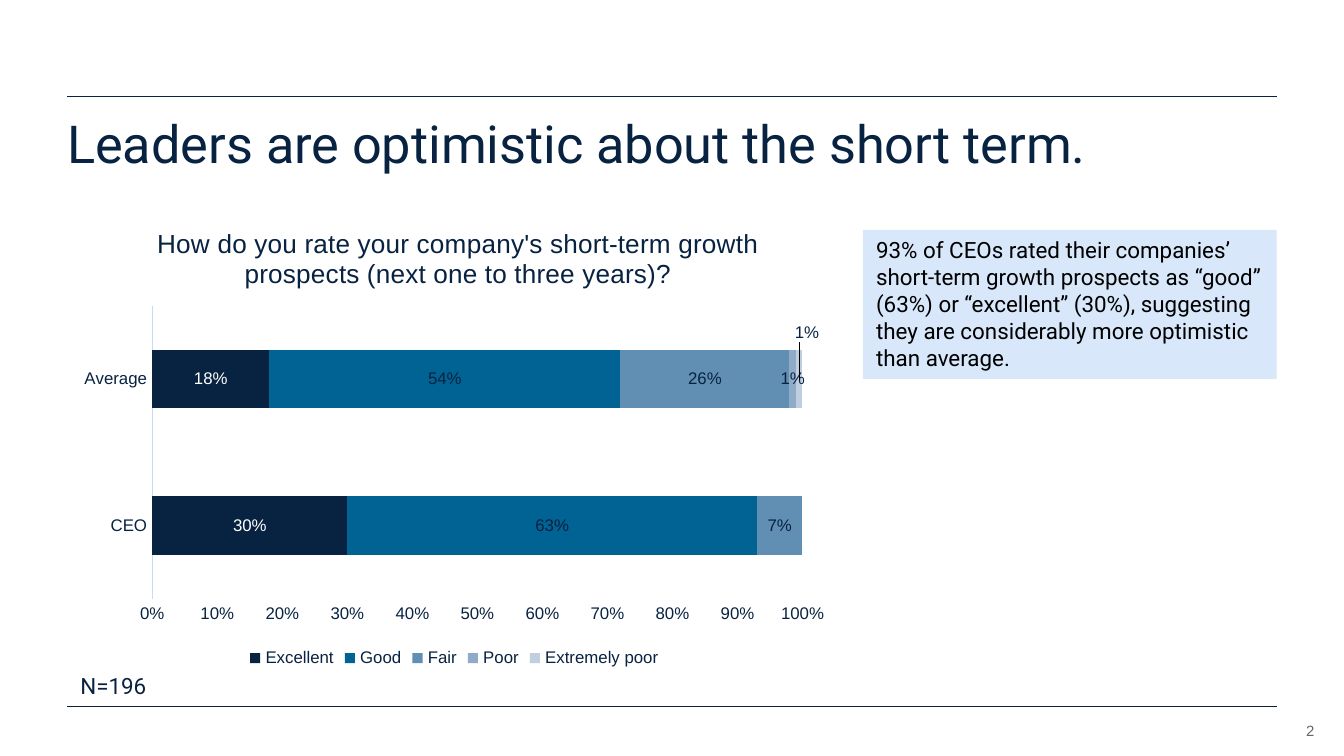
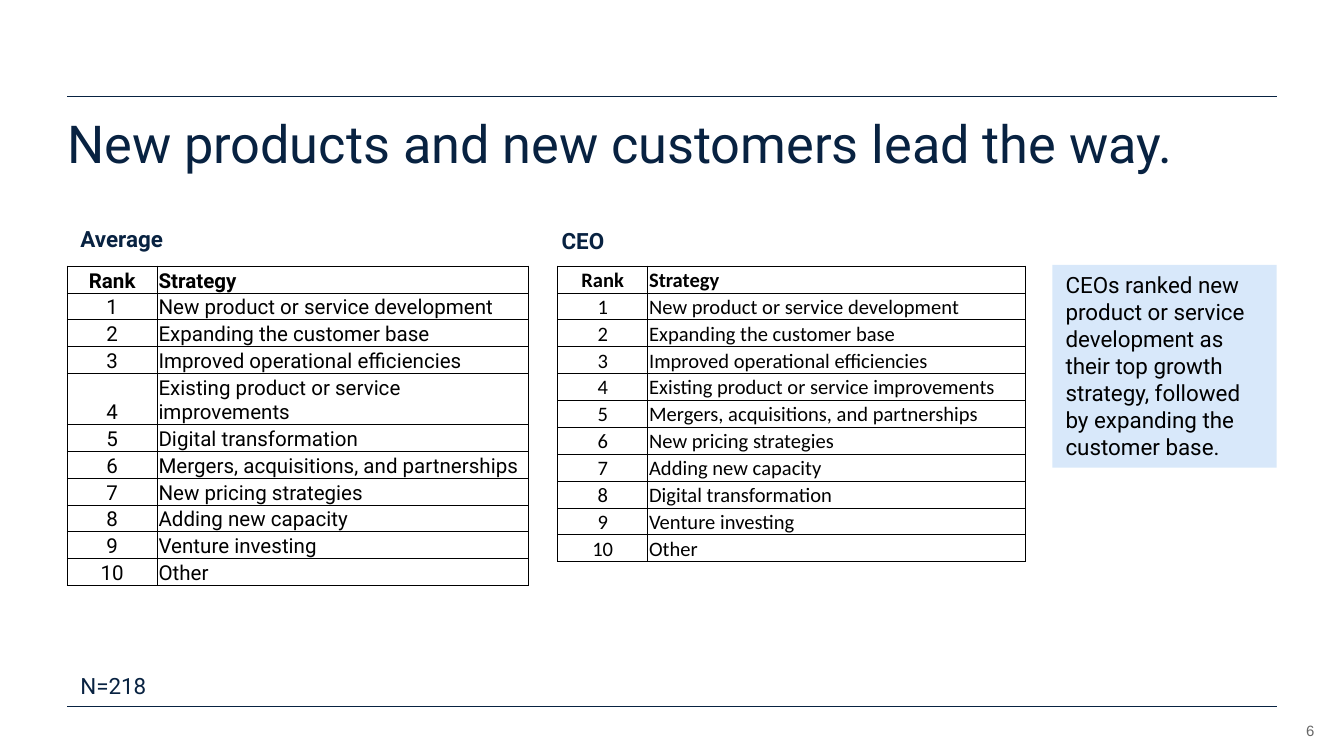
from lxml import etree
from pptx import Presentation
from pptx.chart.data import CategoryChartData
from pptx.dml.color import RGBColor
from pptx.enum.chart import XL_CHART_TYPE, XL_LABEL_POSITION, XL_LEGEND_POSITION, XL_TICK_MARK
from pptx.enum.shapes import MSO_CONNECTOR, MSO_SHAPE
from pptx.enum.text import MSO_ANCHOR, MSO_AUTO_SIZE, PP_ALIGN
from pptx.oxml import parse_xml
from pptx.oxml.ns import nsdecls, qn
from pptx.util import Inches, Pt

STACKED = XL_CHART_TYPE.BAR_STACKED_100
LABEL_CENTER = XL_LABEL_POSITION.CENTER
LEGEND_BOTTOM = XL_LEGEND_POSITION.BOTTOM
NO_TICK = XL_TICK_MARK.NONE
STRAIGHT = MSO_CONNECTOR.STRAIGHT
RECT = MSO_SHAPE.RECTANGLE
TOP, BOTTOM = MSO_ANCHOR.TOP, MSO_ANCHOR.BOTTOM
GROW, FIXED = MSO_AUTO_SIZE.SHAPE_TO_FIT_TEXT, MSO_AUTO_SIZE.NONE
LEFT, CENTER, RIGHT = PP_ALIGN.LEFT, PP_ALIGN.CENTER, PP_ALIGN.RIGHT

COLORS = {
    "navy": "082241", "blue": "006393", "steel": "618EB3", "mist": "8FABC8",
    "pale": "C1CEDF", "axis": "C5DCF8", "callout": "D8E8FA",
    "black": "000000", "white": "FFFFFF", "gray": "666666",
}
FONT, CHART_FONT = "Roboto", "Arial"
MARGIN, CONTENT_W = 0.5, 9

RATINGS = [
    ("Excellent", (0.30, 0.18), "navy"),
    ("Good", (0.63, 0.54), "blue"),
    ("Fair", (0.07, 0.26), "steel"),
    ("Poor", (None, 0.01), "mist"),
    ("Extremely poor", (None, 0.01), "pale"),
]
TOP_STRATEGIES = [
    "New product or service development", "Expanding the customer base",
    "Improved operational efficiencies", "Existing product or service improvements",
]
AVERAGE_RANKING = TOP_STRATEGIES + [
    "Digital transformation", "Mergers, acquisitions, and partnerships",
    "New pricing strategies", "Adding new capacity", "Venture investing", "Other",
]
CEO_RANKING = TOP_STRATEGIES + [
    "Mergers, acquisitions, and partnerships", "New pricing strategies",
    "Adding new capacity", "Digital transformation", "Venture investing", "Other",
]


def rgb(name):
    """Return the named colour."""
    return RGBColor.from_string(COLORS[name])


def style_font(font, size, color="navy", name=FONT, bold=False):
    """Set the look of a font."""
    font.size, font.name, font.bold = Pt(size), name, bold
    font.color.rgb = rgb(color)


def write(tf, text, size, color="navy", name=FONT, bold=False, align=LEFT):
    """Put one run of text in a text frame."""
    p = tf.paragraphs[0]
    p.alignment = align
    r = p.add_run()
    r.text = text
    style_font(r.font, size, color, name, bold)
    return p


def set_insets(box, left, top, right, bottom):
    """Set the inner margins of a text frame or cell."""
    box.margin_left, box.margin_top = Inches(left), Inches(top)
    box.margin_right, box.margin_bottom = Inches(right), Inches(bottom)


def add_rule(s, y):
    """Draw a full-width horizontal rule."""
    line = s.shapes.add_connector(STRAIGHT, Inches(MARGIN), Inches(y),
                                  Inches(MARGIN + CONTENT_W), Inches(y))
    line.line.color.rgb = rgb("navy")
    line.line.width = Pt(0.5)
    etree.SubElement(line._element.spPr, qn("a:effectLst"))


def add_label(s, text, x, y, w, bold=False):
    """Add a one-line label."""
    sp = s.shapes.add_textbox(Inches(x), Inches(y), Inches(w), Inches(0.3))
    tf = sp.text_frame
    tf.word_wrap = True
    tf.auto_size = GROW
    write(tf, text, 12, bold=bold)


def add_callout(s, text, x, y, w, h):
    """Add a tinted box with a finding."""
    sp = s.shapes.add_shape(RECT, Inches(x), Inches(y), Inches(w), Inches(h))
    sp.shadow.inherit = False
    sp.fill.solid()
    sp.fill.fore_color.rgb = rgb("callout")
    sp.line.fill.background()
    tf = sp.text_frame
    tf.word_wrap = True
    tf.auto_size = GROW
    tf.vertical_anchor = TOP
    write(tf, text, 12, "black")


def add_slide(prs, title, number, sample):
    """Add a slide with title, rules, page number and sample size."""
    s = prs.slides.add_slide(prs.slide_layouts[5])
    add_rule(s, 0.72)
    add_rule(s, 5.26)
    sp = s.shapes.add_textbox(Inches(9.31), Inches(5.32), Inches(0.47), Inches(0.18))
    tf = sp.text_frame
    tf.word_wrap = True
    tf.vertical_anchor = BOTTOM
    set_insets(tf, 0, 0, 0, 0)
    write(tf, number, 8, "gray", CHART_FONT, align=RIGHT)
    sp = s.shapes.title
    sp.left, sp.top = Inches(MARGIN), Inches(0.88)
    sp.width, sp.height = Inches(CONTENT_W), Inches(0.55)
    tf = sp.text_frame
    tf.word_wrap = True
    tf.auto_size = FIXED
    tf.vertical_anchor = TOP
    set_insets(tf, 0, 0, 0, 0)
    write(tf, title, 28).line_spacing = 0.9
    add_label(s, sample, MARGIN, 4.95, 0.96)
    return s


def chart_layout(x, y, w=None, h=None):
    """Return a manual chart layout, with a size for the plot area."""
    inner = '<c:layoutTarget val="inner"/>' if w else ""
    modes = '<c:xMode val="edge"/><c:yMode val="edge"/>' if y > 0 else ""
    size = f'<c:w val="{w}"/><c:h val="{h}"/>' if w else ""
    return parse_xml(f'<c:layout {nsdecls("c")}><c:manualLayout>{inner}{modes}'
                     f'<c:x val="{x}"/><c:y val="{y}"/>{size}</c:manualLayout></c:layout>')


def place(element, layout):
    """Replace the layout of a chart part."""
    for old in element.findall(qn("c:layout")):
        element.remove(old)
    first = element.find(qn("c:tx"))
    element.insert(0 if first is None else 1, layout)


def hide_leader_lines(labels):
    """Turn off the lines from moved labels to their bars."""
    for flag in labels.findall(qn("c:showLeaderLines")):
        labels.remove(flag)
    labels.append(parse_xml(
        f'<c:extLst {nsdecls("c")}><c:ext uri="{{CE6537A1-D6FC-4f65-9D91-7224C49458BB}}" '
        'xmlns:c15="http://schemas.microsoft.com/office/drawing/2012/chart">'
        '<c15:showLeaderLines val="0"/></c:ext></c:extLst>'))


def style_series(series, color):
    """Colour a series and show its values."""
    series.format.fill.solid()
    series.format.fill.fore_color.rgb = rgb(color)
    labels = series.data_labels
    labels.show_value = True
    labels.number_format, labels.number_format_is_linked = "0%", False
    labels.position = LABEL_CENTER
    style_font(labels.font, 9, "white" if color == "navy" else "navy", CHART_FONT)
    hide_leader_lines(labels._element)


def raise_label(series, index):
    """Lift one data label above its bar."""
    label = series.points[index].data_label
    style_font(label.font, 9, name=CHART_FONT)
    label.position = LABEL_CENTER
    dlbl = series._element.find(".//" + qn("c:dLbl"))
    dlbl.insert(1, chart_layout(0.01, -0.1))
    dlbl.insert(2, parse_xml(
        f'<c:numFmt {nsdecls("c")} formatCode="0%" sourceLinked="0"/>'))


def add_ratings_chart(s, title, x, y, w, h):
    """Add the stacked bar chart of ratings."""
    data = CategoryChartData(number_format="0%")
    data.categories = ["CEO", "Average"]
    for name, values, _ in RATINGS:
        data.add_series(name, values)
    chart = s.shapes.add_chart(STACKED, Inches(x), Inches(y), Inches(w), Inches(h), data).chart
    style_font(chart.font, 10, name=CHART_FONT)
    write(chart.chart_title.text_frame, title, 14, name=CHART_FONT, align=CENTER)
    chart.chart_title.include_in_layout = False
    place(chart.chart_title._element, chart_layout(0.11, 0.03))
    place(chart._chartSpace.chart.plotArea, chart_layout(0.11, 0.21, 0.84, 0.63))
    chart.has_legend = True
    chart.legend.position = LEGEND_BOTTOM
    chart.legend.include_in_layout = False
    style_font(chart.legend.font, 9, name=CHART_FONT)
    for axis in (chart.category_axis, chart.value_axis):
        axis.has_major_gridlines = False
        axis.major_tick_mark = axis.minor_tick_mark = NO_TICK
        style_font(axis.tick_labels.font, 9, name=CHART_FONT)
    chart.category_axis.format.line.color.rgb = rgb("axis")
    chart.category_axis.format.line.width = Pt(0.75)
    values = chart.value_axis
    values.format.line.fill.background()
    values.minimum_scale, values.maximum_scale, values.major_unit = 0, 1, 0.1
    values.tick_labels.number_format = "0%"
    values.tick_labels.number_format_is_linked = False
    plot = chart.plots[0]
    plot.gap_width, plot.overlap = 150, 100
    plot.vary_by_categories = False
    for series, (_, _, color) in zip(plot.series, RATINGS):
        style_series(series, color)
    raise_label(plot.series[-1], 1)


def add_borders(cell):
    """Give a cell thin black borders."""
    tc_pr = cell._tc.get_or_add_tcPr()
    for side in ("lnL", "lnR", "lnT", "lnB"):
        tc_pr.append(parse_xml(
            f'<a:{side} {nsdecls("a")} w="6350"><a:solidFill>'
            f'<a:srgbClr val="{COLORS["black"]}"/></a:solidFill></a:{side}>'))


def add_ranking(s, strategies, x, strategy_w, font):
    """Add a table of ranked strategies."""
    rows = [("Rank", "Strategy")] + [(str(i), t) for i, t in enumerate(strategies, 1)]
    widths = (0.67, strategy_w)
    table = s.shapes.add_table(len(rows), 2, Inches(x), Inches(1.98),
                               Inches(sum(widths)), Inches(0.2 * len(rows))).table
    table.horz_banding = False
    for column, width in zip(table.columns, widths):
        column.width = Inches(width)
    for i, row in enumerate(rows):
        table.rows[i].height = Inches(0.2)
        for j, text in enumerate(row):
            cell = table.cell(i, j)
            set_insets(cell, 0.01, 0.01, 0.01, 0)
            cell.vertical_anchor = BOTTOM
            add_borders(cell)
            cell.fill.background()
            write(cell.text_frame, text, 11, "black", font, i == 0, LEFT if j else CENTER)


def main():
    """Build the deck."""
    prs = Presentation()
    prs.slide_width = Inches(10)
    prs.slide_height = Inches(10) * 9 // 16

    s = add_slide(prs, "Leaders are optimistic about the short term.", "2", "N=196")
    add_callout(s, "93% of CEOs rated their companies’ short-term growth prospects as "
                "“good” (63%) or “excellent” (30%), suggesting they are considerably "
                "more optimistic than average.", 6.42, 1.71, 3.08, 1.11)
    add_ratings_chart(s, "How do you rate your company's short-term growth prospects "
                      "(next one to three years)?", MARGIN, 1.55, 5.76, 3.46)

    s = add_slide(prs, "New products and new customers lead the way.", "6", "N=218")
    add_callout(s, "CEOs ranked new product or service development as their top growth "
                "strategy, followed by expanding the customer base.", 7.83, 1.97, 1.67, 1.51)
    add_ranking(s, AVERAGE_RANKING, MARGIN, 2.76, FONT)
    add_ranking(s, CEO_RANKING, 4.15, 2.81, "Calibri")
    add_label(s, "Average", MARGIN, 1.63, 1.59, bold=True)
    add_label(s, "CEO", 4.08, 1.64, 1.59, bold=True)

    prs.save("out.pptx")


if __name__ == "__main__":
    main()
